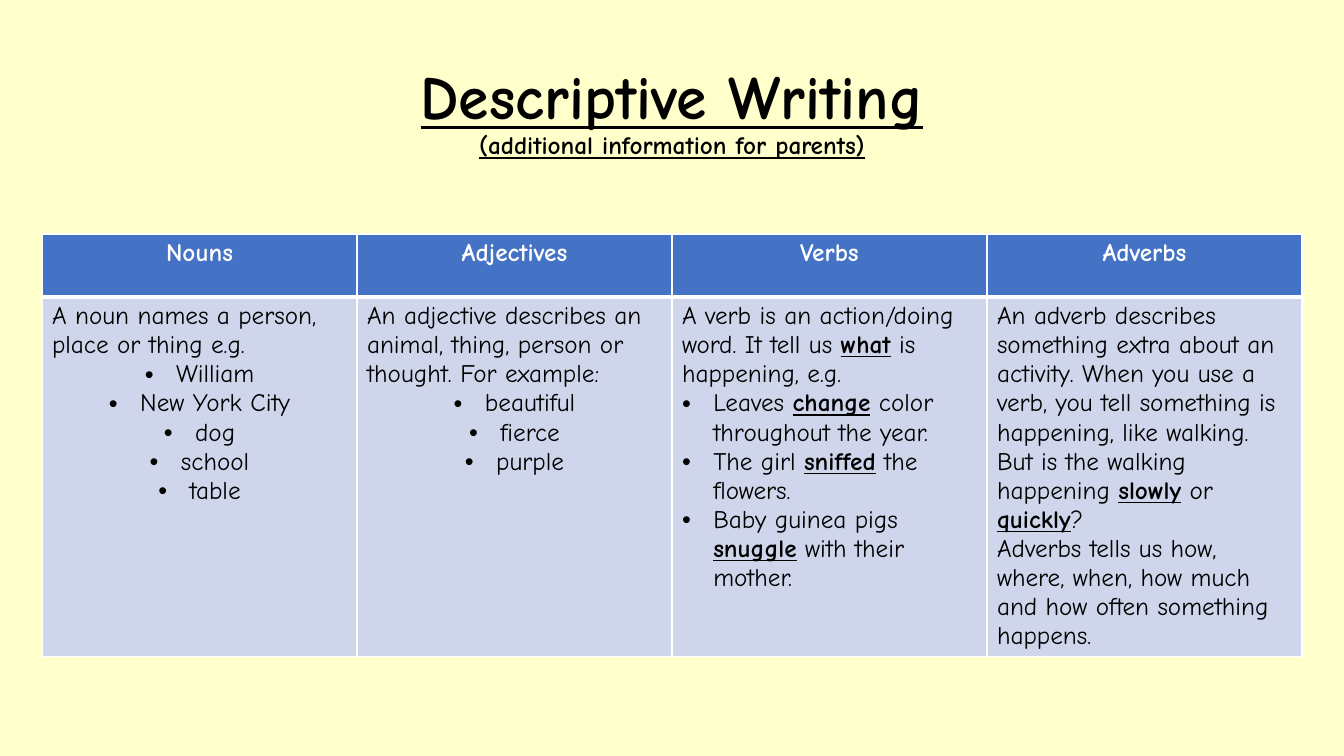
from dataclasses import dataclass

from lxml.etree import SubElement
from pptx import Presentation
from pptx.dml.color import RGBColor
from pptx.enum.text import MSO_ANCHOR as Anchor, MSO_AUTO_SIZE as AutoSize, PP_ALIGN as Align
from pptx.oxml import parse_xml
from pptx.oxml.ns import nsdecls, qn
from pptx.util import Inches, Length, Pt

FONT = "Comic Neue"
BLACK, WHITE, CREAM = "000000", "FFFFFF", "FFFFCC"
HEADER_BLUE, BODY_BLUE = "4472C4", "CFD5EA"
SLIDE_WIDTH, SLIDE_HEIGHT = Inches(13.33), Inches(7.5)
GRID_COLUMNS, GRID_ROWS = 32, 18
BULLET_INDENT = Inches(0.31)
TITLE_LINES = (("Descriptive Writing", 44), ("(additional information for parents)", 18))


@dataclass(frozen=True)
class Line:
    """A paragraph of a cell; words between asterisks are emphasised."""
    text: str
    bullet: bool = False
    align: Align = Align.LEFT


@dataclass(frozen=True)
class WordClass:
    """A column of the table: its heading and its lines."""
    heading: str
    lines: tuple[Line, ...]


def examples(*texts: str, align: Align = Align.LEFT) -> tuple[Line, ...]:
    """Turn texts into bulleted lines."""
    return tuple(Line(text, True, align) for text in texts)


WORD_CLASSES = (
    WordClass("Nouns", (
        Line("A noun names a person, place or thing e.g."),
        *examples("William", "New York City", "dog", "school", "table", align=Align.CENTER),
    )),
    WordClass("Adjectives", (
        Line("An adjective describes an animal, thing, person or thought. For example:"),
        *examples("beautiful", "fierce", "purple", align=Align.CENTER),
    )),
    WordClass("Verbs", (
        Line("A verb is an action/doing word. It tell us *what* is happening, e.g."),
        *examples("Leaves *change* color throughout the year.",
                  "The girl *sniffed* the flowers.",
                  "Baby guinea pigs *snuggle* with their mother."),
    )),
    WordClass("Adverbs", (
        Line("An adverb describes something extra about an activity. When you use a verb, "
             "you tell something is happening, like walking. But is the walking happening "
             "*slowly* or *quickly*?"),
        Line("Adverbs tells us how, where, when, how much and how often something happens."),
    )),
)


def color(value: str) -> RGBColor:
    """Read a colour from its hex string."""
    return RGBColor.from_string(value)


def columns(count: float) -> Length:
    """Give the width of a number of grid columns."""
    return Length(round(SLIDE_WIDTH * count / GRID_COLUMNS))


def rows(count: float) -> Length:
    """Give the height of a number of grid rows."""
    return Length(round(SLIDE_HEIGHT * count / GRID_ROWS))


def format_run(run, size: float, fill: str, bold: bool, underline: bool) -> None:
    """Set the font of a run."""
    font = run.font
    font.name, font.size, font.bold, font.underline = FONT, Pt(size), bold, underline
    font.color.rgb = color(fill)


def add_bullet(paragraph) -> None:
    """Give a paragraph a hanging bullet."""
    properties = paragraph._p.get_or_add_pPr()
    properties.set("marL", str(BULLET_INDENT))
    properties.set("indent", str(-BULLET_INDENT))
    SubElement(properties, qn("a:buFont")).set("typeface", "Arial")
    SubElement(properties, qn("a:buChar")).set("char", "•")


def set_borders(cell, top: float, bottom: float) -> None:
    """Draw white borders around a cell, with widths in points."""
    widths = {"lnL": 1, "lnR": 1, "lnT": top, "lnB": bottom}
    properties = cell._tc.get_or_add_tcPr()
    for position, (edge, width) in enumerate(widths.items()):
        properties.insert(position, parse_xml(
            f'<a:{edge} {nsdecls("a")} w="{Pt(width)}"><a:solidFill>'
            f'<a:srgbClr val="{WHITE}"/></a:solidFill></a:{edge}>'))


def fill_cell(cell, lines: tuple[Line, ...], fill: str, font_fill: str,
              bold: bool, top: float, bottom: float) -> None:
    """Write lines into a cell and style it."""
    cell.fill.solid()
    cell.fill.fore_color.rgb = color(fill)
    set_borders(cell, top, bottom)
    for index, line in enumerate(lines):
        frame = cell.text_frame
        paragraph = frame.add_paragraph() if index else frame.paragraphs[0]
        paragraph.alignment = line.align
        if line.bullet:
            add_bullet(paragraph)
        for number, part in enumerate(line.text.split("*")):
            emphasised = number % 2 == 1
            run = paragraph.add_run()
            run.text = part
            format_run(run, 18, font_fill, bold or emphasised, emphasised)


def add_title(slide) -> None:
    """Fill and place the title placeholder."""
    title = slide.shapes.title
    title.left, title.top = columns(2.2), rows(0.96)
    title.width, title.height = columns(27.6), rows(3.48)
    frame = title.text_frame
    frame.text = "\v".join(text for text, _ in TITLE_LINES)
    frame.word_wrap, frame.auto_size = True, AutoSize.NONE
    frame.vertical_anchor = Anchor.MIDDLE
    paragraph = frame.paragraphs[0]
    paragraph.alignment, paragraph.line_spacing = Align.CENTER, 0.9
    for run, (_, size) in zip(paragraph.runs, TITLE_LINES):
        format_run(run, size, BLACK, True, True)


def add_word_table(slide) -> None:
    """Draw the table with one column per word class."""
    header_height, body_height = rows(1.5), rows(8.52)
    table = slide.shapes.add_table(
        2, len(WORD_CLASSES), columns(1), rows(5.57),
        columns(30), header_height + body_height).table
    table.horz_banding = False
    table.rows[0].height, table.rows[1].height = header_height, body_height
    for index, word_class in enumerate(WORD_CLASSES):
        heading = (Line(word_class.heading, align=Align.CENTER),)
        fill_cell(table.cell(0, index), heading, HEADER_BLUE, WHITE, True, 1, 3)
        fill_cell(table.cell(1, index), word_class.lines, BODY_BLUE, BLACK, False, 3, 1)


def main() -> None:
    """Build and save the slide."""
    presentation = Presentation()
    presentation.slide_width, presentation.slide_height = SLIDE_WIDTH, SLIDE_HEIGHT
    slide = presentation.slides.add_slide(presentation.slide_layouts.get_by_name("Title Only"))
    slide.background.fill.solid()
    slide.background.fill.fore_color.rgb = color(CREAM)
    add_title(slide)
    add_word_table(slide)
    presentation.save("out.pptx")


if __name__ == "__main__":
    main()
